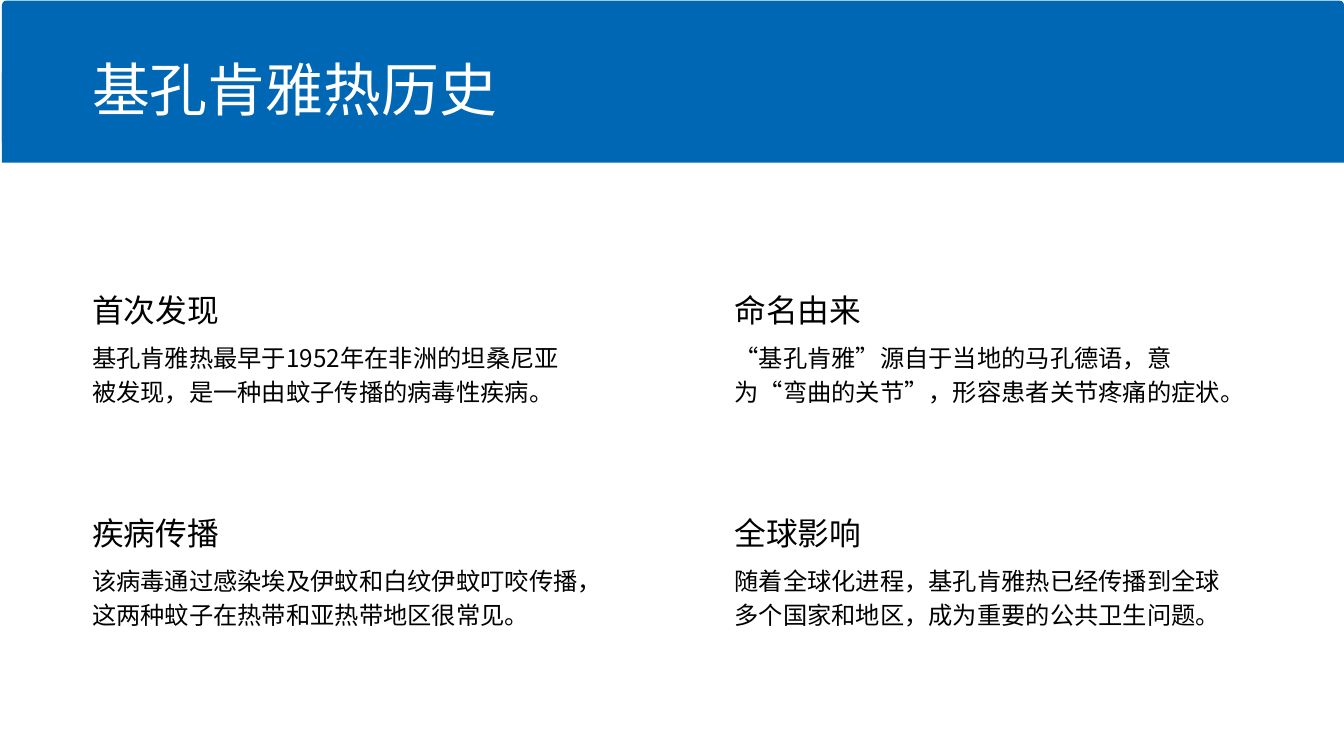
from dataclasses import dataclass

from lxml import etree
from pptx import Presentation
from pptx.dml.color import RGBColor
from pptx.enum.shapes import MSO_SHAPE
from pptx.enum.text import MSO_AUTO_SIZE
from pptx.oxml.ns import qn
from pptx.util import Inches, Pt

RECTANGLE = MSO_SHAPE.RECTANGLE
ROUNDED = MSO_SHAPE.ROUNDED_RECTANGLE
GROW = MSO_AUTO_SIZE.SHAPE_TO_FIT_TEXT


@dataclass(frozen=True)
class Theme:
    font: str = "Noto Sans CJK SC"
    banner: RGBColor = RGBColor(0x00, 0x67, 0xB4)
    light: RGBColor = RGBColor(0xFF, 0xFF, 0xFF)
    dark: RGBColor = RGBColor(0x00, 0x00, 0x00)
    title: int = 62
    heading: int = 34
    body: int = 26
    leading: float = 1.4


class Board:
    FRAME = {
        "margin_left": 0, "margin_right": 0, "margin_top": 0,
        "margin_bottom": 0, "word_wrap": True, "auto_size": GROW,
    }

    def __init__(self, deck, theme):
        self.deck, self.theme = deck, theme
        self.slide = deck.slides.add_slide(deck.slide_layouts[6])

    def place(self, left, top, width, height):
        across, down = self.deck.slide_width, self.deck.slide_height
        sides = (left, across), (top, down), (width, across), (height, down)
        return [round(share * side / 100) for share, side in sides]

    def band(self, kind, area, rounding=None):
        band = self.slide.shapes.add_shape(kind, *self.place(*area))
        band.shadow.inherit = False
        band.fill.solid()
        band.fill.fore_color.rgb = self.theme.banner
        band.line.fill.background()
        if rounding is not None:
            band.adjustments[0] = rounding

    def text(self, wording, area, size, color):
        frame = self.slide.shapes.add_textbox(*self.place(*area)).text_frame
        for name, value in self.FRAME.items():
            setattr(frame, name, value)
        paragraph = frame.paragraphs[0]
        paragraph.line_spacing = Pt(size * self.theme.leading)
        run = paragraph.add_run()
        run.text = wording
        for name, value in {"size": Pt(size), "name": self.theme.font}.items():
            setattr(run.font, name, value)
        run.font.color.rgb = color
        east_asian = etree.SubElement(run.font._element, qn("a:ea"))
        east_asian.set("typeface", self.theme.font)

    def topic(self, heading, body, left, top):
        theme = self.theme
        self.text(heading, (left, top, 31.75, 5.51), theme.heading, theme.dark)
        self.text(body, (left, top + 7.11, 36.55, 8.62), theme.body, theme.dark)


TOPICS = [
    ("首次发现", "基孔肯雅热最早于1952年在非洲的坦桑尼亚被发现，是一种由蚊子传播的病毒性疾病。"),
    ("命名由来", "“基孔肯雅”源自于当地的马孔德语，意为“弯曲的关节”，形容患者关节疼痛的症状。"),
    ("疾病传播", "该病毒通过感染埃及伊蚊和白纹伊蚊叮咬传播，这两种蚊子在热带和亚热带地区很常见。"),
    ("全球影响", "随着全球化进程，基孔肯雅热已经传播到全球多个国家和地区，成为重要的公共卫生问题。"),
]
LEFT, TOP = 6.85, 37.69
COLUMN_STEP, ROW_STEP = 47.8, 29.42


def main():
    deck = Presentation()
    deck.slide_width, deck.slide_height = Inches(20), Inches(11.25)
    theme = Theme()
    board = Board(deck, theme)
    board.band(ROUNDED, (0.15, 0.09, 99.85, 19.2), rounding=0.03)
    board.band(RECTANGLE, (0.15, 9.6, 99.85, 11.91))
    for index, (heading, body) in enumerate(TOPICS):
        row, column = divmod(index, 2)
        board.topic(heading, body, LEFT + column * COLUMN_STEP, TOP + row * ROW_STEP)
    board.text("基孔肯雅热历史", (LEFT, 5.51, 52.1, 10.22), theme.title, theme.light)
    deck.save("out.pptx")


if __name__ == "__main__":
    main()
